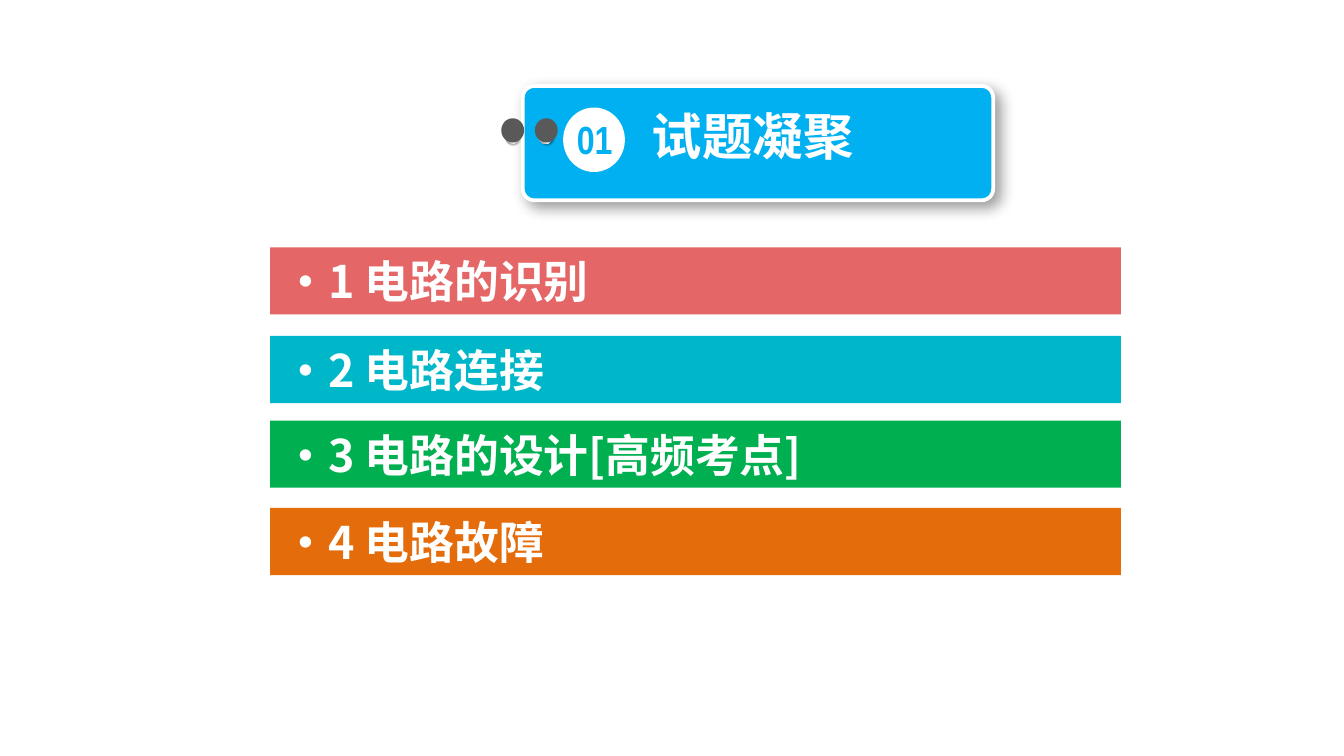
from lxml import etree
from pptx import Presentation
from pptx.dml.color import RGBColor
from pptx.enum import shapes, text
from pptx.oxml.ns import qn
from pptx.util import Inches, Pt

THEME = {
    "white": "FFFFFF", "blue": "00B0F0", "pin": "595959", "shadow": "000000",
    "cjk": "Noto Sans CJK SC", "latin": "Arial Narrow",
    "title": 27, "number": 21, "topic": 24,
}
TITLE = "试题凝聚"
NUMBER = "01"
TOPICS = [
    ("·1 电路的识别", "E56666", 1.84),
    ("·2 电路连接", "00B7CA", 2.5),
    ("·3 电路的设计[高频考点]", "00B050", 3.13),
    ("·4 电路故障", "E46C0A", 3.78),
]
PIN_LEFTS = [3.98, 3.73]
METAL = [(0, "FFFFFF"), (17, "A6A6A6"), (35, "F2F2F2"),
         (55, "A6A6A6"), (75, "F2F2F2"), (100, "A6A6A6")]
BAR_LEFT, BAR_W, BAR_H = 2.01, 6.33, 0.5


def sub(parent, tag, **attrs):
    return etree.SubElement(parent, qn(tag), {k: str(v) for k, v in attrs.items()})


def add_shape(s, kind, box, fill=None):
    sp = s.shapes.add_shape(kind, *map(Inches, box))
    sp.shadow.inherit = False
    sp.line.fill.background()
    if fill:
        sp.fill.solid()
        sp.fill.fore_color.rgb = RGBColor.from_string(fill)
    return sp


def add_shadow(sp, blur, dist):
    effects = sp.element.spPr.find(qn("a:effectLst"))
    shadow = sub(effects, "a:outerShdw", blurRad=Pt(blur), dist=Pt(dist),
                 dir=45 * 60000, algn="tl", rotWithShape=0)
    color = sub(shadow, "a:srgbClr", val=THEME["shadow"])
    sub(color, "a:alpha", val=40000)


def fill_metal(sp):
    sp.fill.gradient()
    grad = sp.element.spPr.find(qn("a:gradFill"))
    stops = grad.find(qn("a:gsLst"))
    for stop in list(stops):
        stops.remove(stop)
    for pos, color in METAL:
        sub(sub(stops, "a:gs", pos=pos * 1000), "a:srgbClr", val=color)
    grad.find(qn("a:lin")).set("ang", str(45 * 60000))


def write(sp, words, size, color, font, align):
    tf = sp.text_frame
    tf.word_wrap = True
    tf.auto_size = text.MSO_AUTO_SIZE.NONE
    tf.vertical_anchor = text.MSO_ANCHOR.MIDDLE
    tf.margin_left = tf.margin_right = Inches(0.1)
    tf.margin_top = tf.margin_bottom = Inches(0.05)
    p = tf.paragraphs[0]
    p.alignment = align
    p.line_spacing = 1
    r = p.add_run()
    r.text = words
    r.font.size = Pt(THEME[size])
    r.font.bold = True
    r.font.name = THEME[font]
    r.font.color.rgb = RGBColor.from_string(THEME[color])
    sub(r.font._element, "a:ea", typeface=THEME[font])


def add_header(s):
    kinds = shapes.MSO_SHAPE
    card = add_shape(s, kinds.ROUNDED_RECTANGLE, (3.89, 0.64, 3.5, 0.85), THEME["blue"])
    card.adjustments[0] = 0.1
    card.line.color.rgb = RGBColor.from_string(THEME["white"])
    card.line.width = Pt(2)
    add_shadow(card, 8, 4)

    for left in PIN_LEFTS:
        base = add_shape(s, kinds.OVAL, (left + 0.03, 0.97, 0.1, 0.1))
        base.rotation = 270
        fill_metal(base)
        add_shadow(base, 1, 1)
        add_shape(s, kinds.OVAL, (left, 0.88, 0.17, 0.18), THEME["pin"])

    add_shape(s, kinds.OVAL, (4.19, 0.8, 0.46, 0.48), THEME["white"])
    number = s.shapes.add_textbox(*map(Inches, (4.16, 0.81, 0.53, 0.45)))
    write(number, NUMBER, "number", "blue", "latin", text.PP_ALIGN.CENTER)

    title = s.shapes.title
    title.left, title.top, title.width, title.height = map(Inches, (4.49, 0.73, 2.22, 0.56))
    write(title, TITLE, "title", "white", "cjk", text.PP_ALIGN.CENTER)
    title.element.getparent().append(title.element)


def add_topics(s):
    for words, color, top in TOPICS:
        box = (BAR_LEFT, top, BAR_W, BAR_H)
        bar = add_shape(s, shapes.MSO_SHAPE.RECTANGLE, box, color)
        write(bar, words, "topic", "white", "cjk", text.PP_ALIGN.LEFT)


def main():
    prs = Presentation()
    prs.slide_width = Inches(10)
    prs.slide_height = prs.slide_width * 9 // 16
    s = prs.slides.add_slide(prs.slide_layouts[5])
    add_header(s)
    add_topics(s)
    prs.save("out.pptx")


if __name__ == "__main__":
    main()
